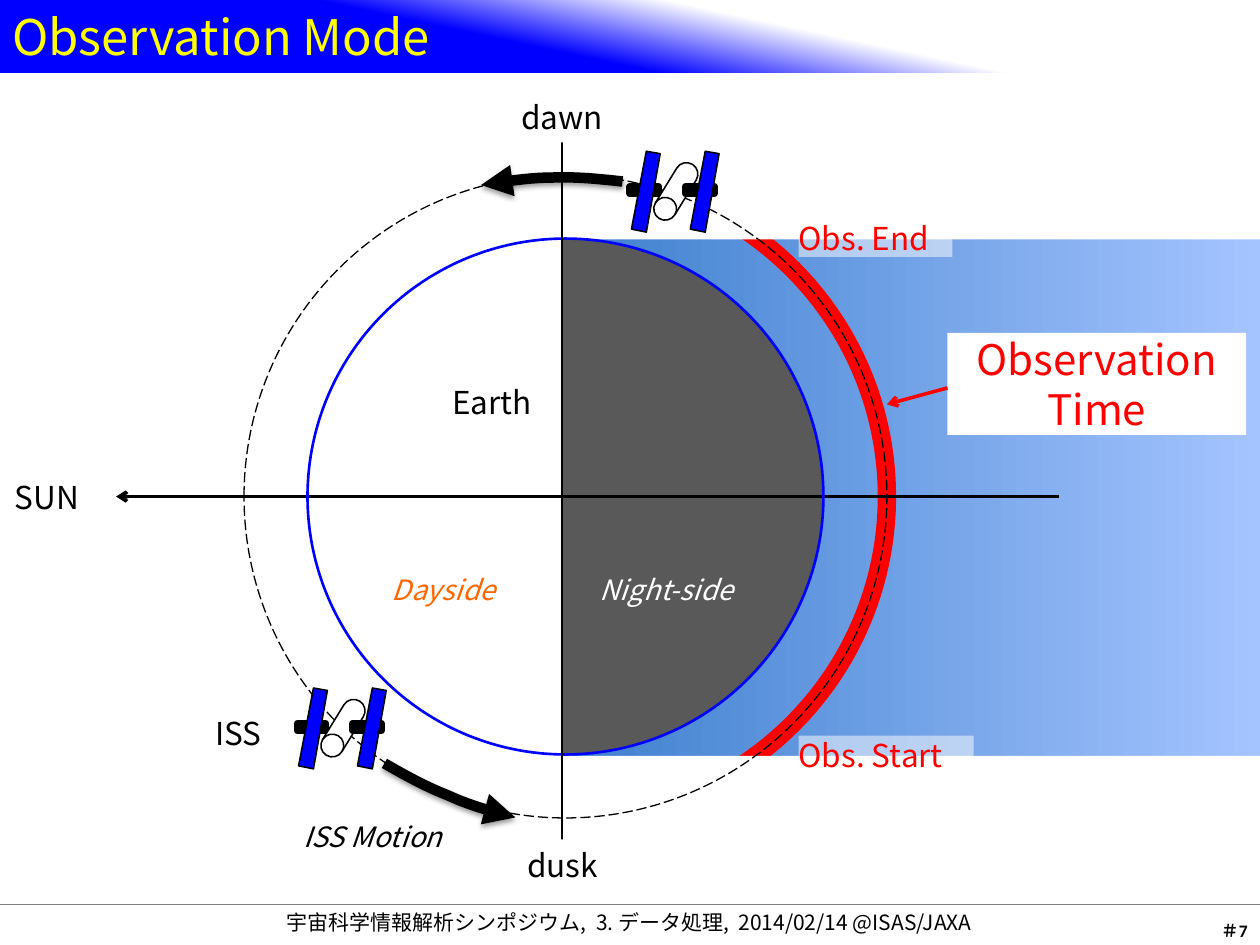
from math import atan2, cos, pi, sin

from lxml.etree import SubElement
from pptx import Presentation
from pptx.dml.color import RGBColor
from pptx.enum.dml import MSO_LINE
from pptx.enum.shapes import MSO_CONNECTOR, MSO_SHAPE
from pptx.enum.text import MSO_ANCHOR, PP_ALIGN
from pptx.oxml.ns import qn
from pptx.util import Cm, Pt

C = {"black": "000000", "white": "FFFFFF", "blue": "0000FF", "red": "FF0000",
     "yellow": "FFFF00", "orange": "FF6600", "gray": "808080", "night": "595959",
     "shade_dark": "3F80CE", "shade_light": "A4C4FF"}
FONT = "Noto Sans CJK JP"
CENTER = (11.4, 10.01)
EARTH_R, ORBIT_R = 5.2, 6.48
TERMINATOR_X = 11.33


def rgb(name):
    return RGBColor.from_string(C[name])


def arc(center, radius, start, end, steps=8):
    angles = [start + (end - start) * i / steps for i in range(steps + 1)]
    return [(center[0] + radius * cos(a), center[1] + radius * sin(a)) for a in angles]


def bezier(p0, p1, p2, p3, steps=10):
    """Points along a cubic curve, without its start."""
    points = []
    for i in range(1, steps + 1):
        t = i / steps
        weights = ((1 - t) ** 3, 3 * t * (1 - t) ** 2, 3 * t * t * (1 - t), t ** 3)
        points.append(tuple(sum(w * p[k] for w, p in zip(weights, (p0, p1, p2, p3)))
                            for k in (0, 1)))
    return points


class Deck:
    def __init__(self):
        self.prs = Presentation()
        self.prs.slide_width, self.prs.slide_height = Cm(25.4), Cm(19.05)
        self.s = self.prs.slides.add_slide(self.prs.slide_layouts[5])
        self.sp = self.s.shapes

    def paint(self, shape, fill=None, line=None, width=0.75):
        shape.shadow.inherit = False
        if fill:
            shape.fill.solid()
            shape.fill.fore_color.rgb = rgb(fill)
        else:
            shape.fill.background()
        if line:
            shape.line.color.rgb = rgb(line)
            shape.line.width = Pt(width)
        else:
            shape.line.fill.background()
        return shape

    def rect(self, box, fill=None, line=None, width=0.75, alpha=None, parent=None):
        shape = (parent or self.sp).add_shape(MSO_SHAPE.RECTANGLE, *map(Cm, box))
        self.paint(shape, fill, line, width)
        if alpha:
            color = shape.element.spPr.find(".//" + qn("a:srgbClr"))
            SubElement(color, qn("a:alpha")).set("val", str(alpha * 1000))
        return shape

    def gradient(self, box, stops, angle, rotation=0):
        shape = self.rect(box)
        shape.rotation = rotation
        shape.fill.gradient()
        shape.fill.gradient_angle = angle
        for stop, (position, color) in zip(shape.fill.gradient_stops, stops):
            stop.position = position
            stop.color.rgb = rgb(color)
        return shape

    def circle(self, radius, **style):
        x, y = CENTER
        shape = self.sp.add_shape(MSO_SHAPE.OVAL, Cm(x - radius), Cm(y - radius),
                                  Cm(2 * radius), Cm(2 * radius))
        return self.paint(shape, **style)

    def outline(self, points, closed=True, parent=None, **style):
        pts = [(Cm(x), Cm(y)) for x, y in points]
        builder = (parent or self.sp).build_freeform(*pts[0])
        builder.add_line_segments(pts[1:], close=closed)
        return self.paint(builder.convert_to_shape(), **style)

    def arrowhead(self, shape, kind):
        ln = shape.element.spPr.find(qn("a:ln"))
        SubElement(ln, qn("a:tailEnd")).set("type", kind)

    def line(self, start, end, color, width=0.75, head=None):
        c = self.sp.add_connector(MSO_CONNECTOR.STRAIGHT, *map(Cm, start + end))
        c.line.color.rgb = rgb(color)
        c.line.width = Pt(width)
        if head:
            self.arrowhead(c, head)
        SubElement(c.element.spPr, qn("a:effectLst"))

    def motion_arrow(self, start, *curves):
        points = [start]
        for curve in curves:
            points += bezier(points[-1], *curve)
        shape = self.outline(points, closed=False, line="black", width=6)
        self.arrowhead(shape, "triangle")
        effects = shape.element.spPr.find(qn("a:effectLst"))
        shadow = SubElement(effects, qn("a:outerShdw"), blurRad=str(Pt(3.1)),
                            dist=str(Pt(1.6)), dir="5400000", rotWithShape="0")
        color = SubElement(shadow, qn("a:srgbClr"), val=C["black"])
        SubElement(color, qn("a:alpha"), val="38000")

    def put_text(self, shape, text, size, color="black", align=PP_ALIGN.LEFT,
                 inset=(0, 0), italic=False, bold=False, font=FONT, spacing=None):
        tf = shape.text_frame
        tf.text = text
        tf.word_wrap = True
        tf.vertical_anchor = MSO_ANCHOR.MIDDLE
        tf.margin_left = tf.margin_right = Cm(inset[0])
        tf.margin_top = tf.margin_bottom = Cm(inset[1])
        for p in tf.paragraphs:
            p.alignment = align
            if spacing:
                p.line_spacing = spacing
            for r in p.runs:
                r.font.size, r.font.name = Pt(size), font
                r.font.bold, r.font.italic = bold, italic
                r.font.color.rgb = rgb(color)
        for props in shape.element.iter(qn("a:rPr")):
            SubElement(props, qn("a:ea")).set("typeface", font)

    def label(self, box, text, size=18, color="black", **style):
        self.put_text(self.sp.add_textbox(*map(Cm, box)), text, size, color, **style)

    def title(self, box, text):
        shape = self.sp.title
        shape.left, shape.top, shape.width, shape.height = map(Cm, box)
        self.put_text(shape, text, 28, "yellow", inset=(0.25, 0.13))
        return shape

    def station(self, x, y):
        """Space station with two solar panels and a capsule, from its top left."""
        group = self.sp.add_group_shape().shapes

        def panel(dx):
            self.rect((x + dx, y + 0.71, 0.58, 0.15), line="black", width=4, parent=group)
            left = x + dx * 1.06
            corners = ((0.33, 0), (0.03, 1.57), (0.33, 1.63), (0.61, 0.05))
            self.outline([(left + px, y + py) for px, py in corners], parent=group,
                         fill="blue", line="black", width=0.88)

        near, far, radius = (x + 0.71, y + 1.16), (x + 1.14, y + 0.46), 0.23
        a = atan2(far[1] - near[1], far[0] - near[0])
        front = arc(near, radius, a - pi / 2, a + pi / 2)
        back = arc(near, radius, a + pi / 2, a + 3 * pi / 2)
        body = arc(far, radius, a - pi / 2, a + pi / 2) + back
        panel(0)
        for points in (body, front + back[1:-1]):
            self.outline(points, parent=group, fill="white")
        for points, closed in ((body, True), (front, False)):
            self.outline(points, closed, parent=group, line="black", width=0.88)
        panel(1.12)


def main():
    d = Deck()
    title = d.title((0, 0, 12.7, 1.45), "Observation Mode")
    band = d.gradient((0, 0, 25.4, 1.47), ((0.41, "blue"), (0.63, "white")), 78)
    title.element.addprevious(band.element)
    d.label((18.26, 18.42, 7.14, 0.69), "＃7", 10, align=PP_ALIGN.RIGHT, bold=True,
            font="Calibri", inset=(0.25, 0.13))
    d.line((0, 18.24), (25.4, 18.24), "gray")
    d.label((0.84, 18.21, 23.7, 0.76),
            "宇宙科学情報解析シンポジウム,  3. データ処理,  2014/02/14 @ISAS/JAXA", 12,
            align=PP_ALIGN.CENTER, inset=(0.25, 0.13))

    # Earth's shadow and the observed arc, trimmed by white masks
    d.gradient((12.5, 3.07, 11.84, 13.97), ((0, "shade_dark"), (1, "shade_light")), 90, 90)
    d.circle(ORBIT_R, line="red", width=10.5)
    d.rect((4.14, 15.24, 21.26, 2.41), "white")
    d.rect((3.73, 2.34, 21.67, 2.49), "white")
    d.circle(EARTH_R, fill="night")
    d.rect((3.73, 4.67, TERMINATOR_X - 3.73, 10.8), "white")

    d.label((9.12, 7.72, 1.88, 0.76), "Earth")
    d.label((7.9, 11.53, 2.64, 0.69), "Dayside", 16, "orange", italic=True)
    d.label((12.09, 11.53, 3.35, 0.69), "Night-side", 16, "white", italic=True)
    d.label((0.3, 9.63, 1.42, 0.76), "SUN")
    d.label((4.34, 14.4, 1.09, 0.76), "ISS")
    d.label((6.12, 16.51, 3.28, 0.69), "ISS Motion", 16, italic=True)
    d.put_text(d.rect((19.1, 6.71, 6.02, 2.06), "white"), "Observation\nTime", 24, "red",
               align=PP_ALIGN.CENTER, inset=(0.2, 0), spacing=Pt(28.8))

    d.line((21.34, CENTER[1]), (2.34, CENTER[1]), "black", 2, "arrow")
    d.circle(EARTH_R, line="blue", width=1.5)
    d.circle(ORBIT_R, line="black").line.dash_style = MSO_LINE.LONG_DASH
    d.station(5.99, 13.87)
    d.motion_arrow((7.75, 15.39), ((8.15, 15.62), (8.56, 15.85), (9.02, 16.03)),
                   ((9.45, 16.23), (9.91, 16.36), (10.39, 16.48)))
    d.line((19.1, 7.82), (17.88, 8.15), "red", 2, "arrow")
    d.station(12.7, 3.05)
    d.motion_arrow((12.55, 3.66), ((12.09, 3.61), (11.61, 3.56), (11.13, 3.58)),
                   ((10.67, 3.58), (10.19, 3.66), (9.7, 3.73)))
    d.line((TERMINATOR_X, 2.34), (TERMINATOR_X, 17.32), "black")

    for box, text in (((10.24, 1.85, 2.18, 1.02), "dawn"),
                      ((10.31, 16.92, 2.06, 1.02), "dusk")):
        d.put_text(d.rect(box, "white"), text, 18, align=PP_ALIGN.CENTER, inset=(0.25, 0.13))
    for box, text in (((16.1, 14.83, 3.53, 0.76), "Obs. Start"),
                      ((16.1, 4.42, 3.1, 0.76), "Obs. End")):
        d.put_text(d.rect(box, "white", alpha=51), text, 18, "red")
    d.prs.save("out.pptx")


if __name__ == "__main__":
    main()
